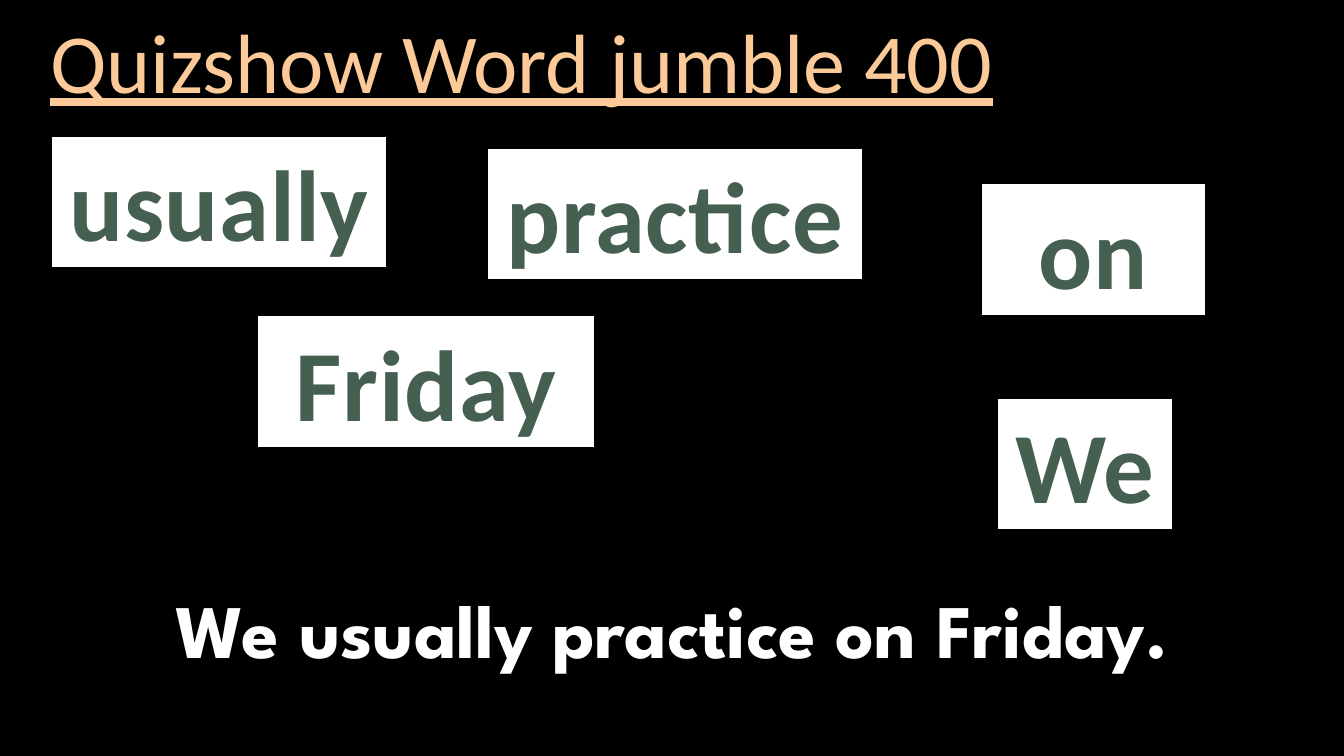
from dataclasses import dataclass

from pptx import Presentation
from pptx import util as u
from pptx.dml.color import RGBColor
from pptx.enum import shapes, text


@dataclass(frozen=True)
class Theme:
    black: RGBColor = RGBColor.from_string("000000")
    white: RGBColor = RGBColor.from_string("FFFFFF")
    peach: RGBColor = RGBColor.from_string("FBCA98")
    green: RGBColor = RGBColor.from_string("455F51")
    body_font: str = "Calibri"
    answer_font: str = "League Spartan"
    title_size: int = 60
    card_size: int = 72
    answer_size: int = 54


THEME = Theme()
WIDTH, HEIGHT = 13.33, 7.5
CARD_HEIGHT = 1.31

# word, left, top, width, wraps
CARDS = [
    ("usually", 0.51, 1.35, 3.33, False),
    ("practice", 4.83, 1.47, 3.73, False),
    ("on", 9.73, 1.82, 2.23, True),
    ("We", 9.89, 3.95, 1.74, True),
    ("Friday", 2.55, 3.13, 3.35, True),
]


def write(sp, words, font, size, color, align, wrap=True):
    """Put one line of text in a shape and return its run."""
    tf = sp.text_frame
    tf.word_wrap = wrap
    p = tf.paragraphs[0]
    p.alignment = align
    r = p.add_run()
    r.text = words
    r.font.name = font
    r.font.size = u.Pt(size)
    r.font.color.rgb = color
    return r


def add_title(s, box, words):
    sp = s.shapes.add_textbox(*map(u.Inches, box))
    r = write(sp, words, THEME.body_font, THEME.title_size, THEME.peach,
              text.PP_ALIGN.LEFT)
    r.font.underline = True
    sp.text_frame.vertical_anchor = text.MSO_ANCHOR.MIDDLE
    sp.text_frame.paragraphs[0].line_spacing = 0.9


def add_card(s, box, word, wrap):
    sp = s.shapes.add_shape(shapes.MSO_SHAPE.RECTANGLE, *map(u.Inches, box))
    sp.shadow.inherit = False
    sp.fill.solid()
    sp.fill.fore_color.rgb = THEME.white
    sp.line.color.rgb = THEME.black
    sp.line.width = u.Pt(1)
    r = write(sp, word, THEME.body_font, THEME.card_size, THEME.green,
              text.PP_ALIGN.CENTER, wrap)
    r.font.bold = True
    r.font._element.set("spc", "50")
    sp.text_frame.vertical_anchor = text.MSO_ANCHOR.TOP
    sp.text_frame.auto_size = text.MSO_AUTO_SIZE.SHAPE_TO_FIT_TEXT


def add_answer(s, box, sentence):
    sp = s.shapes.add_textbox(*map(u.Inches, box))
    r = write(sp, sentence, THEME.answer_font, THEME.answer_size, THEME.white,
              text.PP_ALIGN.CENTER)
    r.font.bold = True
    sp.text_frame.auto_size = text.MSO_AUTO_SIZE.SHAPE_TO_FIT_TEXT


def add_jumble_slide(prs):
    s = prs.slides.add_slide(prs.slide_layouts[6])
    s.background.fill.solid()
    s.background.fill.fore_color.rgb = THEME.black
    add_title(s, (0.4, 0.16, 11.39, 0.99), "Quizshow Word jumble 400")
    for word, left, top, width, wrap in CARDS:
        add_card(s, (left, top, width, CARD_HEIGHT), word, wrap)
    add_answer(s, (0, 5.73, WIDTH, 1.01), "We usually practice on Friday.")


def main():
    prs = Presentation()
    prs.slide_width, prs.slide_height = u.Inches(WIDTH), u.Inches(HEIGHT)
    add_jumble_slide(prs)
    prs.save("out.pptx")


if __name__ == "__main__":
    main()
